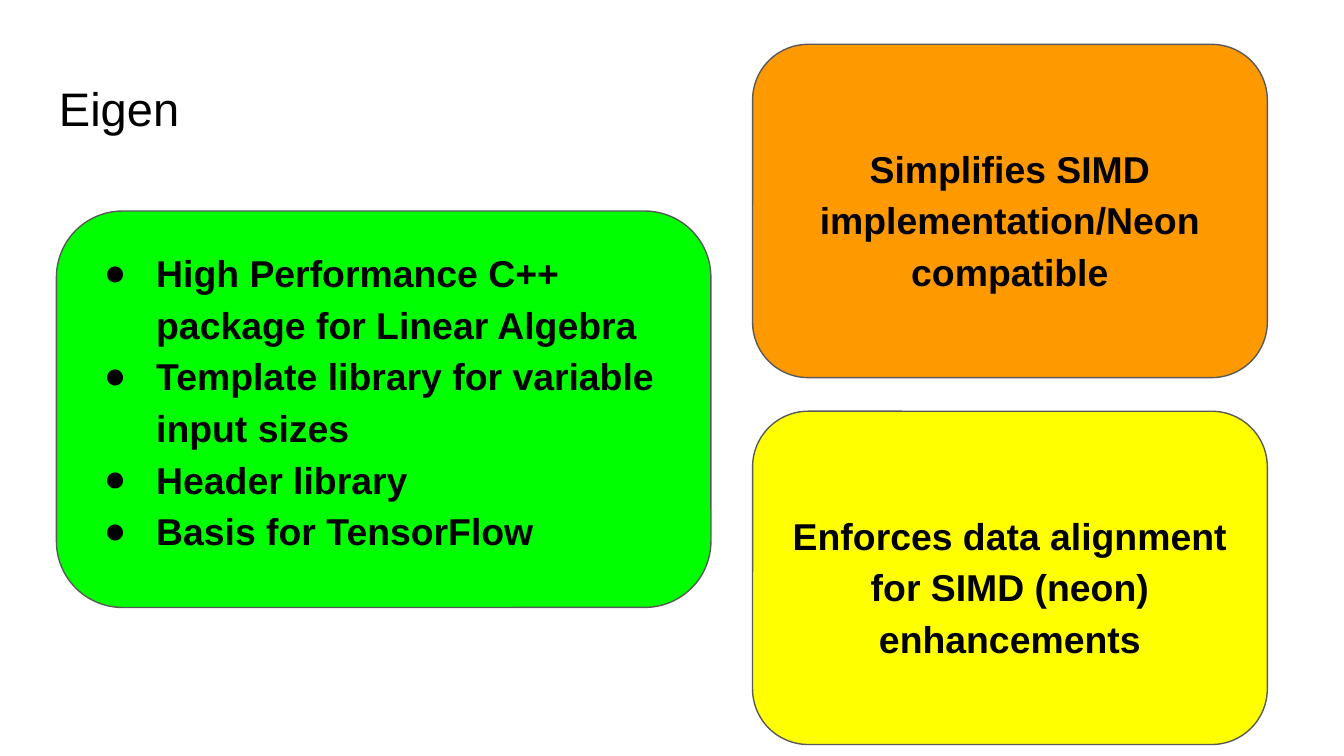
from dataclasses import dataclass

import pptx
import pptx.dml.color
import pptx.enum.shapes
import pptx.enum.text
import pptx.oxml
import pptx.oxml.ns
import pptx.util
from pptx.util import Inches

ALIGN = pptx.enum.text.PP_ALIGN
ANCHOR = pptx.enum.text.MSO_ANCHOR


@dataclass(frozen=True)
class Theme:
    font: str = "Arial"
    text: str = "000000"
    outline: str = "595959"
    green: str = "00FF00"
    orange: str = "FF9900"
    yellow: str = "FFFF00"
    title_size: float = 25.2
    body_size: float = 20
    line_spacing: float = 1.15
    outline_width: float = 0.75
    corner: float = 0.167
    inset: float = 0.1


@dataclass(frozen=True)
class Card:
    left: float
    top: float
    width: float
    height: float
    fill: str
    lines: tuple[str, ...]
    bulleted: bool = False
    top_inset: float = 0.1


THEME = Theme()

RIGHT_LEFT, RIGHT_TOP, RIGHT_STEP = 5.6, 0.33, 2.73
RIGHT_WIDTH, RIGHT_HEIGHT = 3.83, 2.48
BENEFITS = (
    (THEME.orange, "Simplifies SIMD implementation/Neon compatible"),
    (THEME.yellow, "Enforces data alignment for SIMD (neon) enhancements"),
)
FEATURES = Card(
    0.42, 1.57, 4.87, 2.95, THEME.green,
    (
        "High Performance C++ package for Linear Algebra",
        "Template library for variable input sizes",
        "Header library",
        "Basis for TensorFlow",
    ),
    bulleted=True,
)


def rgb(value: str) -> pptx.dml.color.RGBColor:
    return pptx.dml.color.RGBColor.from_string(value)


def set_frame(tf, anchor, top_inset: float = THEME.inset) -> None:
    inset = Inches(THEME.inset)
    settings = {
        "word_wrap": True,
        "vertical_anchor": anchor,
        "margin_left": inset,
        "margin_right": inset,
        "margin_top": Inches(top_inset),
        "margin_bottom": inset,
    }
    for name, value in settings.items():
        setattr(tf, name, value)


def add_run(p, text: str, size: float, bold: bool = False) -> None:
    r = p.add_run()
    r.text = text
    settings = {"name": THEME.font, "size": pptx.util.Pt(size), "bold": bold}
    for name, value in settings.items():
        setattr(r.font, name, value)
    r.font.color.rgb = rgb(THEME.text)


def add_bullet(p) -> None:
    """Give the paragraph a hanging round bullet."""
    props = p._p.get_or_add_pPr()
    props.set("marL", str(Inches(0.5)))
    props.set("indent", str(Inches(-0.39)))
    ns = pptx.oxml.ns.nsdecls("a")
    for xml in (
        f'<a:buClr {ns}><a:srgbClr val="{THEME.text}"/></a:buClr>',
        f'<a:buFont {ns} typeface="{THEME.font}"/>',
        f'<a:buChar {ns} char="●"/>',
    ):
        props.append(pptx.oxml.parse_xml(xml))


def add_title(s, text: str) -> None:
    box = s.shapes.add_textbox(Inches(0.34), Inches(0.49), Inches(9.32), Inches(0.63))
    set_frame(box.text_frame, ANCHOR.TOP)
    add_run(box.text_frame.paragraphs[0], text, THEME.title_size)


def add_card(s, card: Card) -> None:
    sp = s.shapes.add_shape(
        pptx.enum.shapes.MSO_SHAPE.ROUNDED_RECTANGLE,
        Inches(card.left), Inches(card.top), Inches(card.width), Inches(card.height),
    )
    sp.adjustments[0] = THEME.corner
    sp.shadow.inherit = False
    sp.fill.solid()
    sp.fill.fore_color.rgb = rgb(card.fill)
    sp.line.color.rgb = rgb(THEME.outline)
    sp.line.width = pptx.util.Pt(THEME.outline_width)

    tf = sp.text_frame
    set_frame(tf, ANCHOR.TOP if card.bulleted else ANCHOR.MIDDLE, card.top_inset)
    for i, line in enumerate(card.lines):
        p = tf.add_paragraph() if i else tf.paragraphs[0]
        p.alignment = ALIGN.LEFT if card.bulleted else ALIGN.CENTER
        p.line_spacing = THEME.line_spacing
        if card.bulleted:
            add_bullet(p)
        add_run(p, line, THEME.body_size, bold=True)


def main() -> None:
    prs = pptx.Presentation()
    prs.slide_width = Inches(10)
    prs.slide_height = prs.slide_width * 9 // 16
    s = prs.slides.add_slide(prs.slide_layouts[6])
    add_title(s, "Eigen")
    add_card(s, FEATURES)
    for i, (fill, text) in enumerate(BENEFITS):
        top = RIGHT_TOP + i * RIGHT_STEP
        add_card(s, Card(RIGHT_LEFT, top, RIGHT_WIDTH, RIGHT_HEIGHT, fill, (text,),
                         top_inset=0.18))
    prs.save("out.pptx")


if __name__ == "__main__":
    main()
